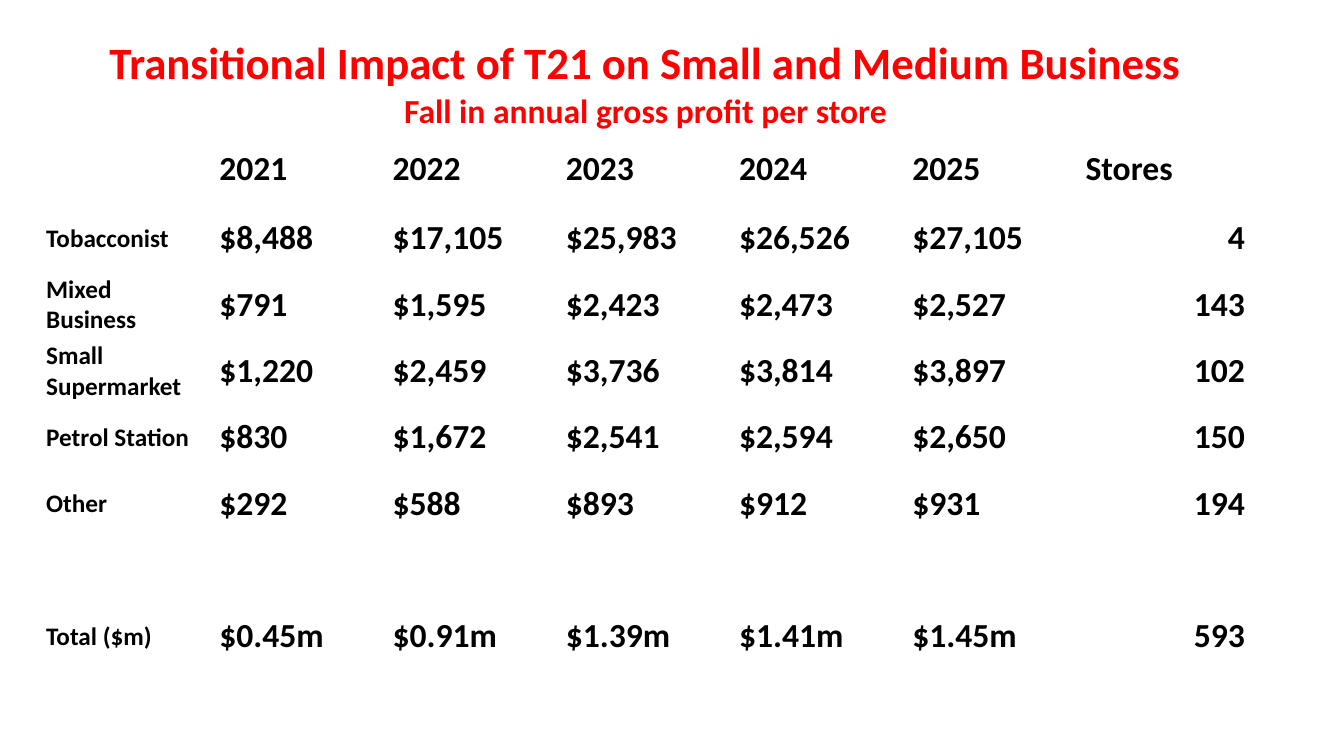
"""Build a slide with a table of the gross profit lost per store, by business type."""
from lxml import etree
from pptx import Presentation
from pptx import util as u
from pptx.dml.color import RGBColor
from pptx.enum import text
from pptx.oxml import ns

TITLE = [("Transitional Impact of T21 on Small and Medium Business", 32),
         ("Fall in annual gross profit per store", 24)]
HEADER = ["", "2021", "2022", "2023", "2024", "2025", "Stores"]
BODY = [
    ["Tobacconist", "$8,488", "$17,105", "$25,983", "$26,526", "$27,105", "4"],
    ["Mixed Business", "$791", "$1,595", "$2,423", "$2,473", "$2,527", "143"],
    ["Small Supermarket", "$1,220", "$2,459", "$3,736", "$3,814", "$3,897", "102"],
    ["Petrol Station", "$830", "$1,672", "$2,541", "$2,594", "$2,650", "150"],
    ["Other", "$292", "$588", "$893", "$912", "$931", "194"],
    [""] * 7,
    ["Total ($m)", "$0.45m", "$0.91m", "$1.39m", "$1.41m", "$1.45m", "593"],
    [""] * 7,
]
FONT = "Calibri"
RED = RGBColor(0xFF, 0x00, 0x00)
BLACK = RGBColor(0x00, 0x00, 0x00)
WHITE = RGBColor(0xFF, 0xFF, 0xFF)
LEFT, TOP = 28, 26.6
COL_W = 123.75
TITLE_H, HEADER_H, ROW_H = 58.3, 51.6, 47.4
INSET = 5
ALIGN = text.PP_ALIGN


def write(p, content, size=24, color=BLACK, align=ALIGN.LEFT):
    """Put one bold run in a paragraph."""
    p.alignment = align
    r = p.add_run()
    r.text = content
    r.font.name, r.font.size, r.font.bold = FONT, u.Pt(size), True
    r.font.color.rgb = color


def style_cell(cell, anchor=text.MSO_ANCHOR.MIDDLE, bottom=1):
    """Clear the fill, set the insets and draw white borders."""
    cell.fill.background()
    cell.vertical_anchor = anchor
    cell.margin_left = cell.margin_right = u.Pt(INSET)
    cell.margin_top = cell.margin_bottom = 0
    tc_pr = cell._tc.get_or_add_tcPr()
    widths = {"a:lnL": 1, "a:lnR": 1, "a:lnT": 1, "a:lnB": bottom}
    for i, (tag, width) in enumerate(widths.items()):
        ln = etree.Element(ns.qn(tag), w=str(u.Pt(width)))
        fill = etree.SubElement(ln, ns.qn("a:solidFill"))
        etree.SubElement(fill, ns.qn("a:srgbClr"), val=str(WHITE))
        tc_pr.insert(i, ln)


def main():
    """Lay out the table and save the slide."""
    prs = Presentation()
    prs.slide_width, prs.slide_height = u.Pt(960), u.Pt(540)
    s = prs.slides.add_slide(prs.slide_layouts[6])
    rows = [HEADER] + BODY
    heights = [TITLE_H, HEADER_H] + [ROW_H] * len(BODY)
    n_cols = len(HEADER)
    table = s.shapes.add_table(len(heights), n_cols, u.Pt(LEFT), u.Pt(TOP),
                               u.Pt(COL_W * n_cols), u.Pt(sum(heights))).table
    table.first_row = table.horz_banding = False
    for col in table.columns:
        col.width = u.Pt(COL_W)
    for row, height in zip(table.rows, heights):
        row.height = u.Pt(height)

    title = table.cell(0, 0)
    title.merge(table.cell(0, n_cols - 1))
    style_cell(title, text.MSO_ANCHOR.BOTTOM, bottom=3)
    tf = title.text_frame
    for i, (line, size) in enumerate(TITLE):
        p = tf.add_paragraph() if i else tf.paragraphs[0]
        write(p, line, size=size, color=RED, align=ALIGN.CENTER)

    for i, values in enumerate(rows, 1):
        for j, value in enumerate(values):
            cell = table.cell(i, j)
            style_cell(cell)
            if value:
                is_count = i > 1 and j == n_cols - 1
                write(cell.text_frame.paragraphs[0], value, size=24 if j else 18,
                      align=ALIGN.RIGHT if is_count else ALIGN.LEFT)
    prs.save("out.pptx")


if __name__ == "__main__":
    main()
